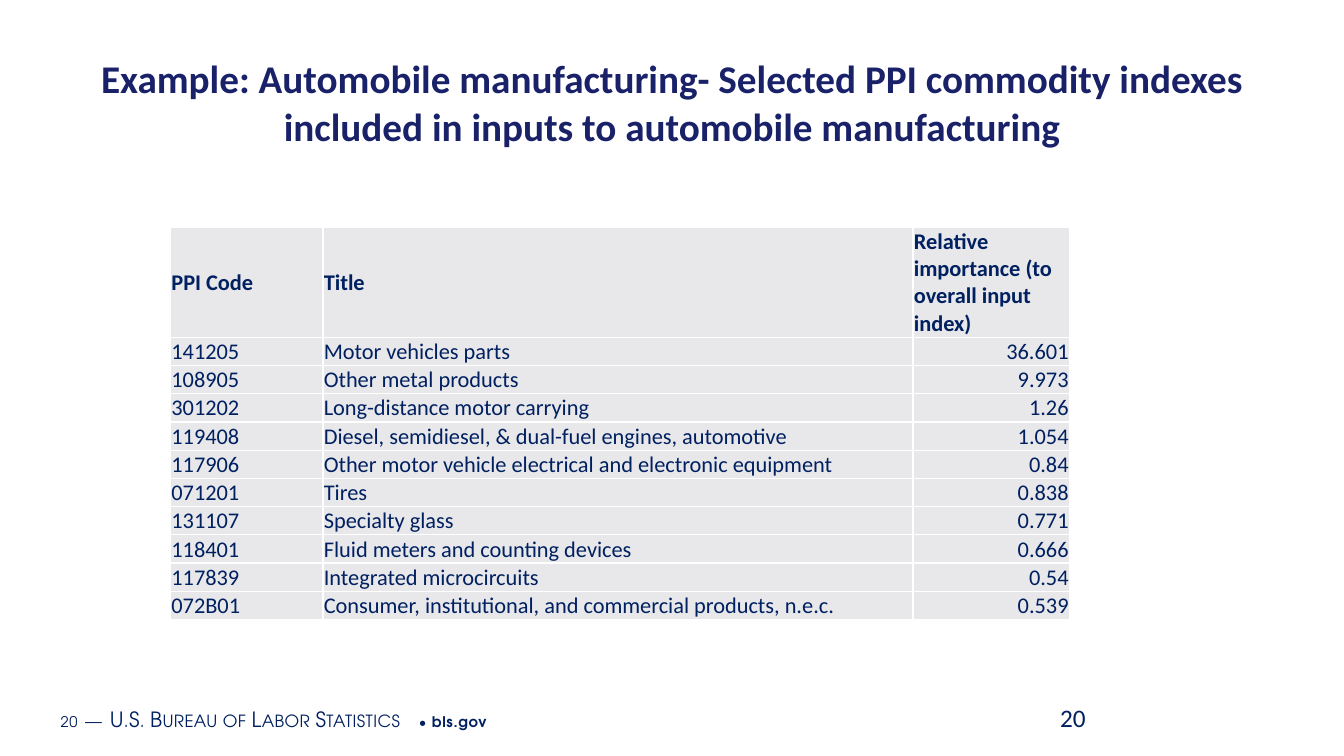
from lxml.etree import SubElement
from pptx import Presentation
from pptx.dml.color import RGBColor
from pptx.enum.text import MSO_ANCHOR as Anchor, MSO_AUTO_SIZE as AutoSize, PP_ALIGN as Align
from pptx.oxml.ns import qn
from pptx.util import Cm, Pt

COLORS = {"title": "192168", "text": "002060", "cell": "E8E8EB", "border": "FFFFFF"}
BODY_FONT, FOOTER_FONT = "Calibri", "TeX Gyre Adventor"


def style(font, size, color="text", bold=False, name=BODY_FONT):
    font.name, font.size, font.bold = name, Pt(size), bold
    font.color.rgb = RGBColor.from_string(COLORS[color])


def add_borders(cell):
    for side in ("lnL", "lnR", "lnT", "lnB"):
        line = SubElement(cell._tc.get_or_add_tcPr(), qn(f"a:{side}"), w=str(Pt(1)))
        fill = SubElement(line, qn("a:solidFill"))
        SubElement(fill, qn("a:srgbClr"), val=COLORS["border"])


prs = Presentation()
prs.slide_width, prs.slide_height = Cm(33.87), Cm(19.05)
slide = prs.slides.add_slide(prs.slide_layouts[5])

# Title
title = slide.shapes.title
title.left, title.top, title.width, title.height = Cm(1.37), Cm(1.27), Cm(31.12), Cm(2.59)
title.text_frame.text = ("Example: Automobile manufacturing- Selected PPI commodity indexes "
                         "included in inputs to automobile manufacturing")
title.text_frame.auto_size = AutoSize.NONE
title.text_frame.vertical_anchor = Anchor.MIDDLE
heading = title.text_frame.paragraphs[0]
heading.alignment = Align.CENTER
style(heading.font, 28, "title", bold=True)

# Table of commodity indexes
indexes = [
    ("PPI Code", "Title", "Relative importance (to overall input index)"),
    ("141205", "Motor vehicles parts", "36.601"),
    ("108905", "Other metal products", "9.973"),
    ("301202", "Long-distance motor carrying", "1.26"),
    ("119408", "Diesel, semidiesel, & dual-fuel engines, automotive", "1.054"),
    ("117906", "Other motor vehicle electrical and electronic equipment", "0.84"),
    ("071201", "Tires", "0.838"),
    ("131107", "Specialty glass", "0.771"),
    ("118401", "Fluid meters and counting devices", "0.666"),
    ("117839", "Integrated microcircuits", "0.54"),
    ("072B01", "Consumer, institutional, and commercial products, n.e.c.", "0.539"),
]
importance = slide.shapes.add_table(len(indexes), 3, Cm(4.3), Cm(5.72), Cm(22.65), Cm(9.79)).table
for column, width in zip(importance.columns, (3.84, 14.87, 3.94)):
    column.width = Cm(width)
for r, values in enumerate(indexes):
    importance.rows[r].height = Cm(0.71 if r else 2.69)
    for c, value in enumerate(values):
        cell = importance.cell(r, c)
        add_borders(cell)
        cell.fill.solid()
        cell.fill.fore_color.rgb = RGBColor.from_string(COLORS["cell"])
        cell.margin_left = cell.margin_right = cell.margin_top = Cm(0.02)
        cell.margin_bottom = 0
        cell.vertical_anchor = Anchor.MIDDLE
        cell.text = value
        entry = cell.text_frame.paragraphs[0]
        entry.alignment = Align.RIGHT if r and c == 2 else Align.LEFT
        style(entry.font, 16, bold=r == 0)

# Footer: text, size, letter spacing, small caps, bold
footer = slide.shapes.add_textbox(Cm(1.35), Cm(17.6), Cm(21.51), Cm(1.02)).text_frame
footer.word_wrap = True
footer.vertical_anchor = Anchor.MIDDLE
footer.margin_left = footer.margin_right = Cm(0.18)
footer.margin_top = footer.margin_bottom = Cm(0.1)
for text, size, spacing, small_caps, bold in [
    ("20", 10.5, 0.5, False, False),
    (" ", 16, 0.5, False, False),
    ("—", 15, 0.3, True, False),
    (" ", 16, 0.5, False, False),
    ("U.S. Bureau of Labor Statistics", 15, 0.3, True, False),
    (" • ", 10.5, 0.5, False, False),
    ("bls.gov", 10.5, 0.5, False, True),
]:
    part = footer.paragraphs[0].add_run()
    part.text = text
    style(part.font, size, bold=bold, name=FOOTER_FONT)
    properties = part._r.get_or_add_rPr()
    properties.set("spc", str(round(spacing * 100)))
    if small_caps:
        properties.set("cap", "small")

# Page number
page_number = slide.shapes.add_textbox(Cm(26.47), Cm(17.58), Cm(1.91), Cm(1.02)).text_frame
page_number.word_wrap = True
page_number.text = "20"
style(page_number.paragraphs[0].font, 18)

prs.save("out.pptx")
